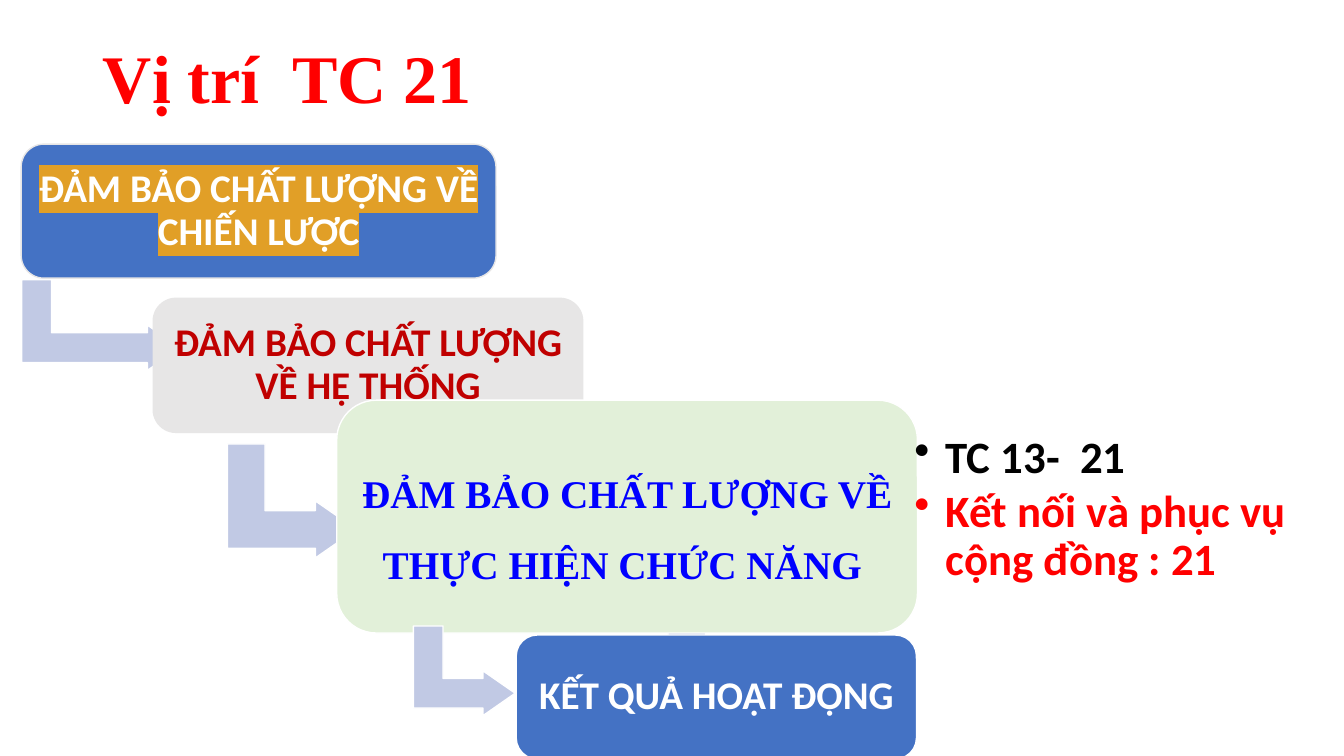
import pptx
import pptx.util
import pptx.dml.color
import pptx.enum.shapes
import pptx.enum.text
import pptx.oxml
import pptx.oxml.ns

PX = 9144  # one px is a hundredth of an inch
COLORS = {
    "red": "FF0000", "dark_red": "C00000", "blue": "0000FF",
    "box_blue": "4472C4", "gray": "E7E6E6", "green": "E2F0D9",
    "arrow": "C1C9E4", "amber": "E19F27", "white": "FFFFFF", "black": "000000",
}
SANS, SERIF = "Calibri", "Times New Roman"
SHAPES = pptx.enum.shapes.MSO_SHAPE
ALIGN = pptx.enum.text.PP_ALIGN


def px(*lengths):
    return [pptx.util.Emu(length * PX) for length in lengths]


def rgb(name):
    return pptx.dml.color.RGBColor.from_string(COLORS[name])


def add_span(para, text, size, color, font=SANS, highlight=None):
    span = para.add_run()
    span.text = text
    span.font.size = pptx.util.Pt(size)
    span.font.bold = True
    span.font.name = font
    span.font.color.rgb = rgb(color)
    if highlight:
        mark = pptx.oxml.parse_xml(
            f'<a:highlight {pptx.oxml.ns.nsdecls("a")}>'
            f'<a:srgbClr val="{COLORS[highlight]}"/></a:highlight>')
        span.font.fill._xPr.find(pptx.oxml.ns.qn("a:solidFill")).addnext(mark)


def prepare_frame(frame, inset):
    frame.word_wrap = True
    frame.auto_size = pptx.enum.text.MSO_AUTO_SIZE.NONE
    frame.vertical_anchor = pptx.enum.text.MSO_ANCHOR.MIDDLE
    frame.margin_left, frame.margin_top, frame.margin_right, frame.margin_bottom = px(*[inset] * 4)


def add_title(page, place, text):
    title = page.shapes.title
    title.left, title.top, title.width, title.height = px(*place)
    prepare_frame(title.text_frame, 10)
    para = title.text_frame.paragraphs[0]
    para.alignment = ALIGN.LEFT
    para.line_spacing = 0.9
    add_span(para, text, 48.6, "red", SERIF)


def add_figure(page, kind, place, fill, line, adjustments):
    figure = page.shapes.add_shape(kind, *px(*place))
    figure.shadow.inherit = False
    figure.fill.solid()
    figure.fill.fore_color.rgb = rgb(fill)
    figure.line.color.rgb = rgb(line)
    figure.line.width = pptx.util.Pt(1)
    for index, value in enumerate(adjustments):
        figure.adjustments[index] = value
    return figure


def add_arrow(page, place):
    arrow = add_figure(page, SHAPES.BENT_UP_ARROW, place, "arrow", "white", [0.33, 0.25, 0.36])
    arrow.rotation = 90


def add_step(page, place, text, fill, line, color, font=SANS, spacing=0.9, highlight=None):
    box = add_figure(page, SHAPES.ROUNDED_RECTANGLE, place, fill, line, [0.17])
    prepare_frame(box.text_frame, 11)
    para = box.text_frame.paragraphs[0]
    para.alignment = ALIGN.CENTER
    para.line_spacing = spacing
    if spacing > 1:
        para.space_after = pptx.util.Pt(6)
    add_span(para, text, 28, color, font, highlight)


def add_bullets(page, place, items):
    frame = page.shapes.add_textbox(*px(*place)).text_frame
    prepare_frame(frame, 13)
    for index, (text, color) in enumerate(items):
        para = frame.add_paragraph() if index else frame.paragraphs[0]
        para.line_spacing = 0.9
        para.space_after = pptx.util.Pt(4)
        add_span(para, text, 32, color)
        properties = para._p.get_or_add_pPr()
        properties.set("marL", str(31 * PX))
        properties.set("indent", str(-31 * PX))
        properties.append(pptx.oxml.parse_xml(
            f'<a:buChar {pptx.oxml.ns.nsdecls("a")} char="•"/>'))


def main():
    deck = pptx.Presentation()
    deck.slide_width, deck.slide_height = px(1333, 750)
    page = deck.slides.add_slide(deck.slide_layouts[5])
    add_title(page, (92, 40, 1150, 82), "Vị trí  TC 21")

    # Staircase of steps, each arrow lying behind the step it leads to
    add_arrow(page, (55, 244, 90, 157))
    add_step(page, (21, 143, 471, 133), "ĐẢM BẢO CHẤT LƯỢNG VỀ CHIẾN LƯỢC",
             "box_blue", "gray", "white", highlight="amber")
    add_arrow(page, (233, 433, 113, 128))
    add_step(page, (152, 296, 426, 133), "ĐẢM BẢO CHẤT LƯỢNG VỀ HỆ THỐNG",
             "gray", "gray", "dark_red")
    add_arrow(page, (670, 619, 113, 128))
    add_step(page, (334, 397, 576, 231), "ĐẢM BẢO CHẤT LƯỢNG VỀ THỰC HIỆN CHỨC NĂNG ",
             "green", "white", "blue", SERIF, 1.5)

    # Criteria beside the third step
    add_bullets(page, (894, 415, 401, 182), [
        ("TC 13-  21", "black"),
        ("Kết nối và phục vụ cộng đồng : 21", "red"),
    ])

    # Final step with its arrow in front
    add_step(page, (512, 630, 397, 123), "KẾT QUẢ HOẠT ĐỘNG", "box_blue", "white", "white")
    add_arrow(page, (416, 615, 89, 101))

    deck.save("out.pptx")


if __name__ == "__main__":
    main()
